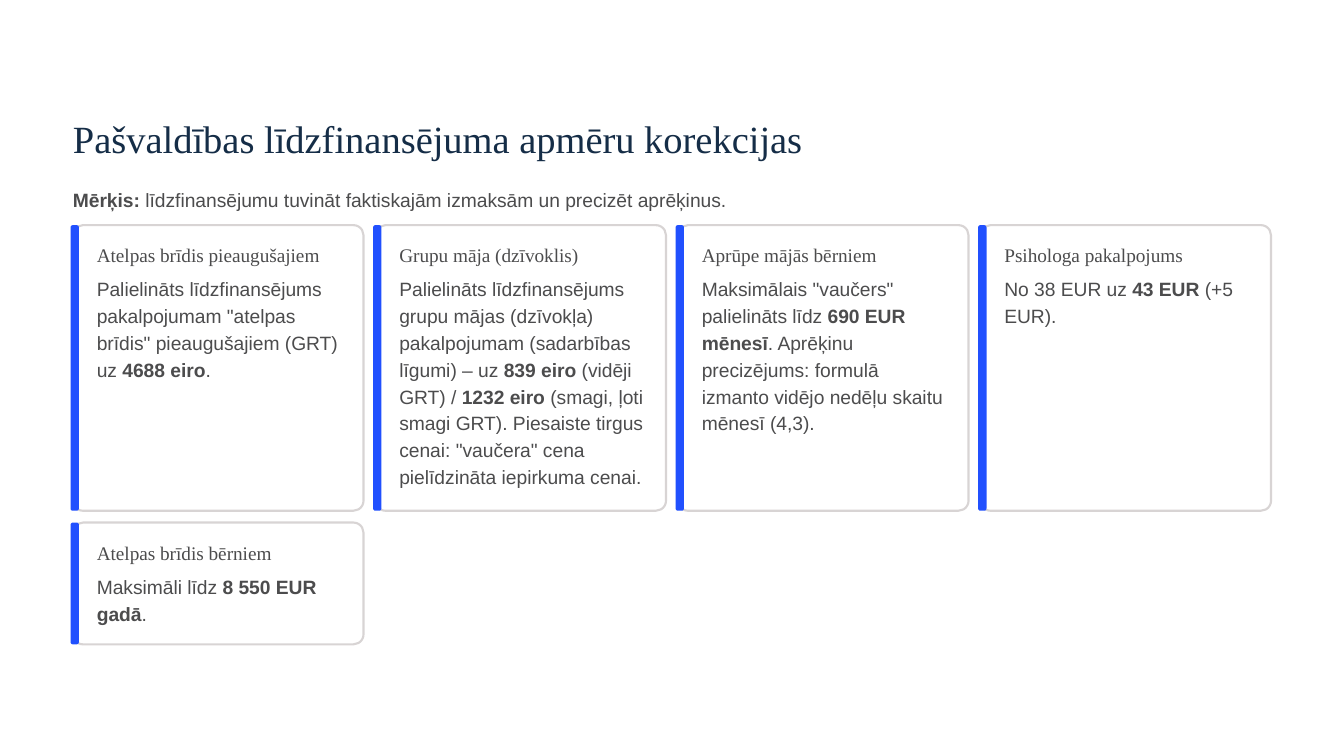
from pptx import Presentation
from pptx.dml.color import RGBColor
from pptx.enum.shapes import MSO_SHAPE
from pptx.util import Pt

ROUNDED = MSO_SHAPE.ROUNDED_RECTANGLE
COLORS = {"paper": "FFFFFF", "navy": "152D47", "text": "4C4C4D",
          "border": "D8D4D4", "accent": "2150FE"}
FORMATS = {
    "title": {"name": "Times New Roman", "size": Pt(33), "color": "navy", "spacing": 41.5},
    "heading": {"name": "Times New Roman", "size": Pt(16.5), "color": "text", "spacing": 20.5},
    "body": {"name": "Arial", "size": Pt(16.5), "color": "text", "spacing": 23},
}

# Card grid
LEFT, TOP = 62.5, 193
CARD_WIDTH, COLUMN_STEP = 249.1, 259.3
ROW_HEIGHTS = [244.8, 104.4]
ROW_GAP = 10.1
COLUMNS = 4

# Asterisks enclose bold words
CARDS = [
    ("Atelpas brīdis pieaugušajiem",
     'Palielināts līdzfinansējums pakalpojumam "atelpas brīdis" pieaugušajiem (GRT) uz '
     "*4688 eiro*.", 4),
    ("Grupu māja (dzīvoklis)",
     "Palielināts līdzfinansējums grupu mājas (dzīvokļa) pakalpojumam (sadarbības līgumi) – uz "
     "*839 eiro* (vidēji GRT) / *1232 eiro* (smagi, ļoti smagi GRT). "
     'Piesaiste tirgus cenai: "vaučera" cena pielīdzināta iepirkuma cenai.', 8),
    ("Aprūpe mājās bērniem",
     'Maksimālais "vaučers" palielināts līdz *690 EUR mēnesī*. Aprēķinu precizējums: '
     "formulā izmanto vidējo nedēļu skaitu mēnesī (4,3).", 6),
    ("Psihologa pakalpojums", "No 38 EUR uz *43 EUR* (+5 EUR).", 2),
    ("Atelpas brīdis bērniem", "Maksimāli līdz *8 550 EUR gadā*.", 2),
]


def rgb(name):
    return RGBColor.from_string(COLORS[name])


class SlideBuilder:
    def __init__(self, slide):
        self.slide = slide
        fill = slide.background.fill
        fill.solid()
        fill.fore_color.rgb = rgb("paper")

    def text(self, left, top, width, height, content, style, wrap=False):
        box = self.slide.shapes.add_textbox(Pt(left), Pt(top), Pt(width), Pt(height))
        frame = box.text_frame
        frame.word_wrap = wrap
        for side in ("left", "top", "right", "bottom"):
            setattr(frame, f"margin_{side}", 0)
        values = FORMATS[style]
        paragraph = frame.paragraphs[0]
        paragraph.line_spacing = Pt(values["spacing"])
        for index, part in enumerate(content.split("*")):
            run = paragraph.add_run()
            run.text = part
            for attribute in ("name", "size"):
                setattr(run.font, attribute, values[attribute])
            run.font.bold = index % 2 == 1
            run.font.color.rgb = rgb(values["color"])

    def panel(self, left, top, width, height, radius, fill, border=None):
        shape = self.slide.shapes.add_shape(ROUNDED, Pt(left), Pt(top), Pt(width), Pt(height))
        shape.shadow.inherit = False
        shape.adjustments[0] = radius / min(width, height)
        shape.fill.solid()
        shape.fill.fore_color.rgb = rgb(fill)
        if border:
            shape.line.color.rgb = rgb(border)
            shape.line.width = Pt(1.8)
        else:
            shape.line.fill.background()

    def card(self, left, top, height, heading, body, lines):
        self.panel(left, top, CARD_WIDTH, height, 8.6, "paper", "border")
        self.panel(left - 2, top, 7.2, height, 2, "accent")
        self.text(left + 20.5, top + 15.1, 200, 20.9, heading, "heading")
        self.text(left + 20.5, top + 41.7, 213.1, lines * 23.4, body, "body", wrap=True)


def main():
    presentation = Presentation()
    presentation.slide_width = Pt(1152)
    presentation.slide_height = Pt(648)
    builder = SlideBuilder(presentation.slides.add_slide(presentation.slide_layouts[6]))

    # Title and aim
    builder.text(LEFT, 96.5, 655, 41.8, "Pašvaldības līdzfinansējuma apmēru korekcijas", "title")
    builder.text(LEFT, 158.4, 1027, 23.8,
                 "*Mērķis:* līdzfinansējumu tuvināt faktiskajām izmaksām un precizēt aprēķinus.",
                 "body")

    # Cards
    for index, card in enumerate(CARDS):
        row, column = divmod(index, COLUMNS)
        top = TOP + sum(ROW_HEIGHTS[:row]) + row * ROW_GAP
        builder.card(LEFT + column * COLUMN_STEP, top, ROW_HEIGHTS[row], *card)

    presentation.save("out.pptx")


if __name__ == "__main__":
    main()
